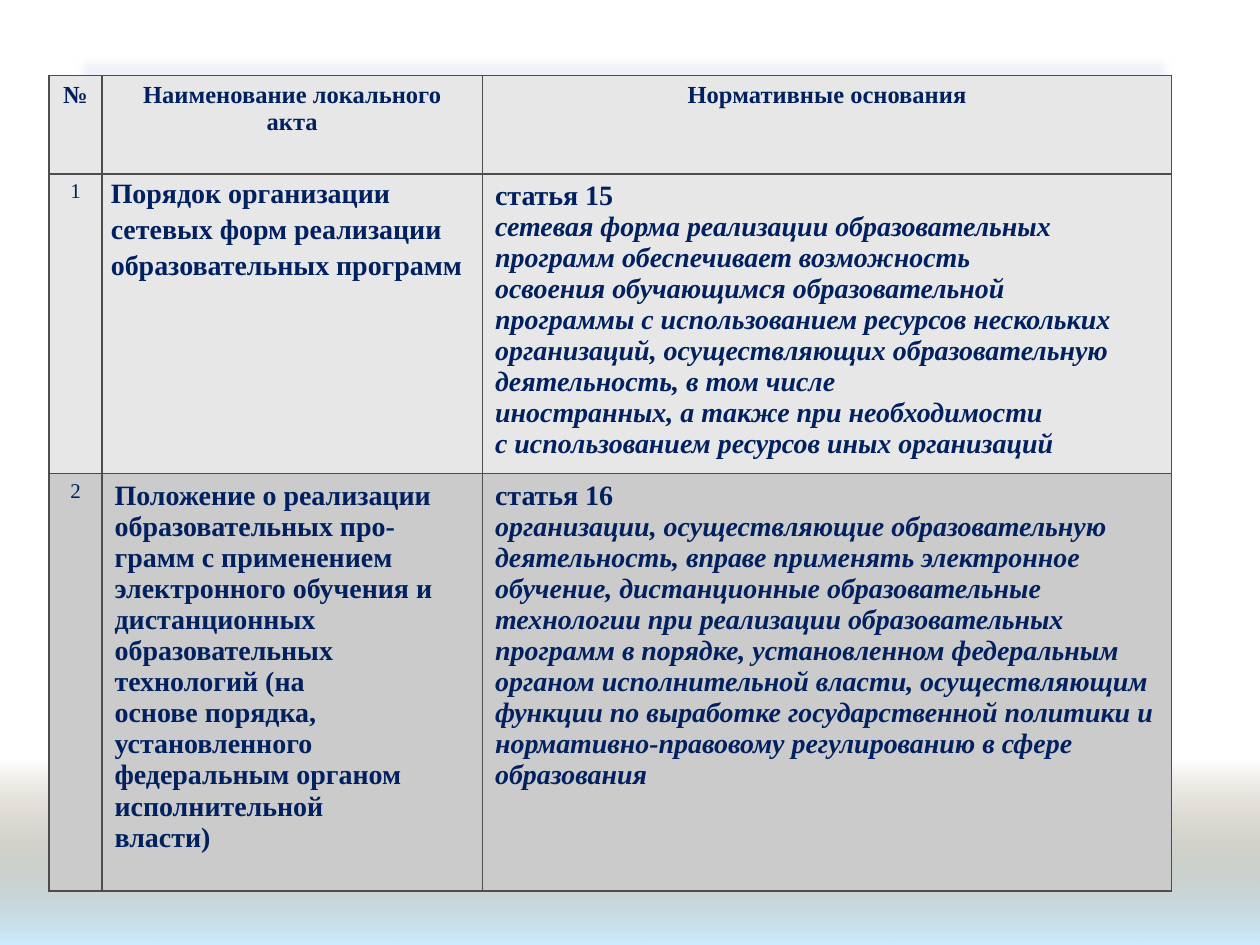
"""Build a slide with a table of local acts and their normative grounds."""
from dataclasses import dataclass

from lxml.etree import SubElement
from pptx import Presentation
from pptx.dml.color import RGBColor
from pptx.enum.shapes import MSO_SHAPE as Preset
from pptx.enum.text import PP_ALIGN as Align
from pptx.oxml.ns import qn
from pptx.slide import Slide
from pptx.table import _Cell as Cell
from pptx.util import Inches, Pt

NAVY = RGBColor(0x00, 0x20, 0x60)
LIGHT_GREY = RGBColor(0xE7, 0xE7, 0xE7)
MID_GREY = RGBColor(0xCB, 0xCB, 0xCB)
BORDER_GREY = RGBColor(0x4D, 0x4D, 0x4D)
PANEL = RGBColor(0xEE, 0xF1, 0xF9)
BROWN = RGBColor(0x76, 0x5E, 0x2F)
SKY = RGBColor(0xCC, 0xEC, 0xFF)
FONT = "Times New Roman"
COLUMN_WIDTHS = (0.42, 3.02, 5.47)
ROW_HEIGHTS = (0.78, 2.38, 3.31)


@dataclass
class CellText:
    lines: tuple[str, ...]
    size: int = 16
    bold: bool = True
    centered: bool = False
    italic_after_first: bool = False
    line_spacing: float | None = None
    tight: bool = False


def header(text: str) -> CellText:
    return CellText((text,), size=14, centered=True)


def number(text: str) -> CellText:
    return CellText((text,), size=12, bold=False, centered=True)


def grounds(*lines: str) -> CellText:
    return CellText(lines, italic_after_first=True)


ROWS = (
    (header("№"), header("Наименование локального акта"), header("Нормативные основания")),
    (
        number("1"),
        CellText(
            ("Порядок организации сетевых форм реализации образовательных программ",),
            line_spacing=1.15,
            tight=True,
        ),
        grounds(
            "статья 15",
            "сетевая форма реализации образовательных программ обеспечивает возможность",
            "освоения обучающимся образовательной",
            "программы с использованием ресурсов нескольких организаций, "
            "осуществляющих образовательную деятельность, в том числе",
            "иностранных, а также при необходимости",
            "с использованием ресурсов иных организаций",
        ),
    ),
    (
        number("2"),
        CellText((
            "Положение о реализации",
            "образовательных про-",
            "грамм с применением",
            "электронного обучения и",
            "дистанционных образовательных технологий (на",
            "основе порядка, установленного федеральным органом исполнительной",
            "власти)",
        )),
        grounds(
            "статья 16",
            "организации, осуществляющие образовательную деятельность, вправе применять "
            "электронное обучение, дистанционные образовательные технологии при реализации "
            "образовательных программ в порядке, установленном федеральным органом "
            "исполнительной власти, осуществляющим функции по выработке государственной "
            "политики и нормативно-правовому регулированию в сфере образования",
        ),
    ),
)
ROW_FILLS = (LIGHT_GREY, LIGHT_GREY, MID_GREY)


def add_bottom_glow(slide: Slide) -> None:
    glow = slide.shapes.add_shape(
        Preset.RECTANGLE, Inches(0), Inches(6.03), Inches(10), Inches(1.47)
    )
    glow.shadow.inherit = False
    glow.line.fill.background()
    glow.fill.gradient()
    glow.fill.gradient_angle = 270
    for stop, color, position in zip(glow.fill.gradient_stops, (BROWN, SKY), (0, 1)):
        stop.color.rgb = color
        stop.position = position
    first_color = glow.element.find(".//" + qn("a:srgbClr"))
    SubElement(first_color, qn("a:alpha"), val="0")


def add_panel(slide: Slide) -> None:
    panel = slide.shapes.add_shape(
        Preset.FLOWCHART_PROCESS, Inches(0.62), Inches(0.47), Inches(8.67), Inches(6.25)
    )
    panel.fill.solid()
    panel.fill.fore_color.rgb = PANEL
    panel.line.color.rgb = PANEL
    panel.line.width = Pt(2)
    panel.shadow.inherit = False
    effects = panel.element.find(".//" + qn("a:effectLst"))
    SubElement(effects, qn("a:softEdge"), rad=str(Inches(0.07)))


def set_borders(cell: Cell) -> None:
    properties = cell._tc.get_or_add_tcPr()
    for side in ("lnL", "lnR", "lnT", "lnB"):
        line = SubElement(properties, qn(f"a:{side}"), w=str(Pt(1)))
        fill = SubElement(line, qn("a:solidFill"))
        SubElement(fill, qn("a:srgbClr"), val=str(BORDER_GREY))


def fill_cell(cell: Cell, content: CellText, color: RGBColor) -> None:
    set_borders(cell)
    cell.fill.solid()
    cell.fill.fore_color.rgb = color
    if content.tight:
        cell.margin_left = cell.margin_right = Inches(0.07)
        cell.margin_top = cell.margin_bottom = Inches(0)
    cell.text_frame.text = "\n".join(content.lines)
    for index, paragraph in enumerate(cell.text_frame.paragraphs):
        paragraph.alignment = Align.CENTER if content.centered else Align.LEFT
        paragraph.line_spacing = content.line_spacing
        for run in paragraph.runs:
            run.font.name = FONT
            run.font.size = Pt(content.size)
            run.font.bold = content.bold
            run.font.italic = content.italic_after_first and index > 0
            run.font.color.rgb = NAVY


def add_acts_table(slide: Slide) -> None:
    table = slide.shapes.add_table(
        len(ROWS), len(COLUMN_WIDTHS), Inches(0.39), Inches(0.6),
        Inches(sum(COLUMN_WIDTHS)), Inches(sum(ROW_HEIGHTS)),
    ).table
    for column, width in zip(table.columns, COLUMN_WIDTHS):
        column.width = Inches(width)
    for row, height, contents, color in zip(table.rows, ROW_HEIGHTS, ROWS, ROW_FILLS):
        row.height = Inches(height)
        for cell, content in zip(row.cells, contents):
            fill_cell(cell, content, color)


def main() -> None:
    presentation = Presentation()
    presentation.slide_width = Inches(10)
    presentation.slide_height = Inches(7.5)
    slide = presentation.slides.add_slide(presentation.slide_layouts[6])
    add_bottom_glow(slide)
    add_panel(slide)
    add_acts_table(slide)
    presentation.save("out.pptx")


if __name__ == "__main__":
    main()
